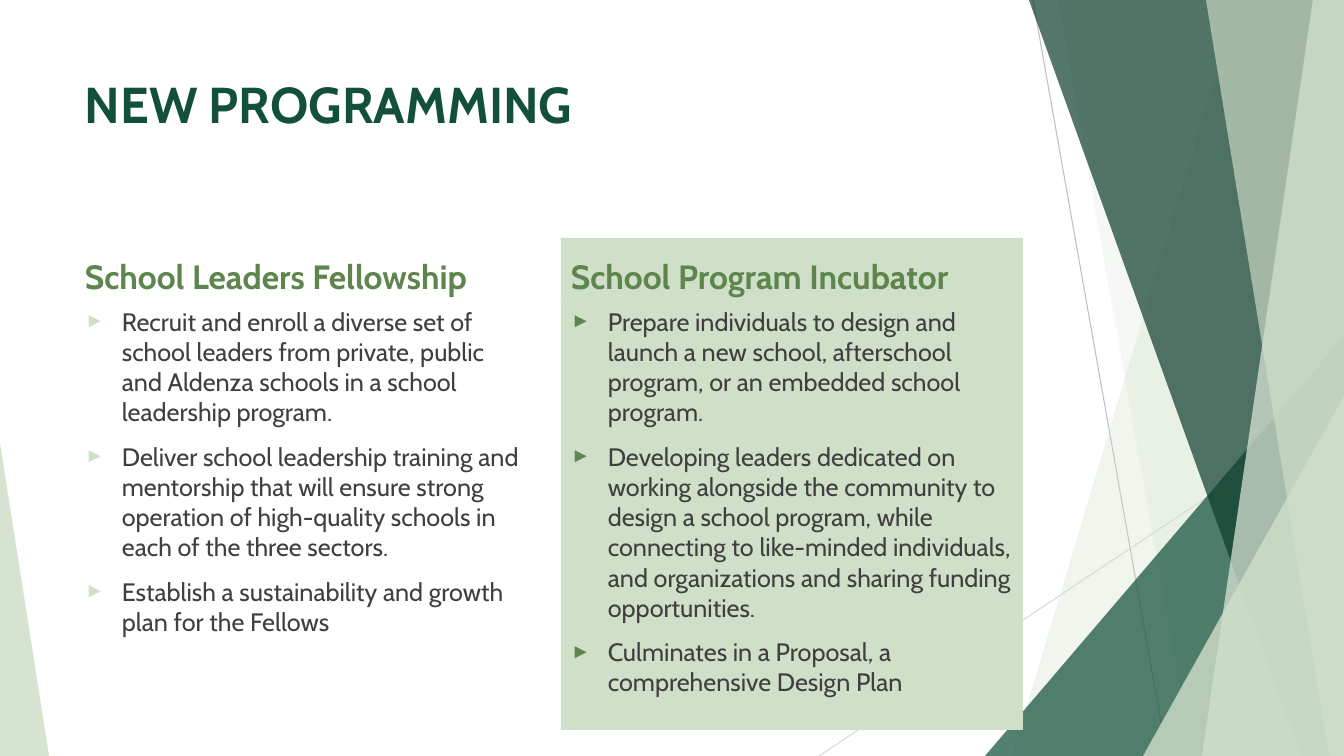
import pptx
import pptx.util
import pptx.dml.color
import pptx.enum.shapes
import pptx.enum.text
import pptx.oxml
import pptx.oxml.ns

SCALE = 914400 / 100.8
WIDTH, HEIGHT = 1344, 756
FONT = "Cabin"
PALE, DARK, DEEP, MIST = "CFDFC8", "13503B", "0E3C2C", "E1EBDD"
MOSS, GRAY = "5E854D", "3F3F3F"

TITLE = "NEW PROGRAMMING"
COLUMNS = [
    {"heading": "School Leaders Fellowship", "fill": None, "bullet": PALE, "height": 364,
     "items": ["Recruit and enroll a diverse set of school leaders from private, public and "
               "Aldenza schools in a school leadership program.",
               "Deliver school leadership training and mentorship that will ensure strong "
               "operation of high-quality schools in each of the three sectors.",
               "Establish a sustainability and growth plan for the Fellows"]},
    {"heading": "School Program Incubator", "fill": PALE, "bullet": MOSS, "height": 429,
     "items": ["Prepare individuals to design and launch a new school, afterschool program, "
               "or an embedded school program.",
               "Developing leaders dedicated on working alongside the community to design a "
               "school program, while connecting to like-minded individuals, and "
               "organizations and sharing funding opportunities.",
               "Culminates in a Proposal, a comprehensive Design Plan"]},
]
LEFT, COLUMN_STEP, COLUMN_WIDTH = 75, 486, 462
HEADING_TOP, HEADING_HEIGHT = 238, 63

LINES = [((1033, 0), (1167, 756), "BFBFBF"), ((1344, 406), (819, 756), "D8D8D8")]
BANDS_BEHIND = [(1238, 1012, PALE, 30), (1058, 1192, PALE, 20)]
LOWER_WEDGE = (985, 336, 359, 420, 1, DARK, 72)
BANDS_FRONT = [(1029, 1301, DEEP, 70), (1313, 1202, MIST, 70), (1206, 1329, PALE, 65)]
CORNER_WEDGES = [(1143, 396, 201, 360, 1, PALE, 80), (0, 443, 49, 313, 0, PALE, 85)]


def px(value):
    return pptx.util.Emu(round(value * SCALE))


def color(code):
    return pptx.dml.color.RGBColor.from_string(code)


def add_child(parent, tag, **attributes):
    child = parent.makeelement(pptx.oxml.ns.qn(tag), attributes)
    parent.append(child)
    return child


def paint(shape, code, opacity=100):
    shape.shadow.inherit = False
    shape.line.fill.background()
    shape.fill.solid()
    shape.fill.fore_color.rgb = color(code)
    if opacity < 100:
        tint = shape.fill._xPr.find(".//" + pptx.oxml.ns.qn("a:srgbClr"))
        add_child(tint, "a:alpha", val=str(opacity * 1000))


def add_line(start, end, code):
    line = slide.shapes.add_connector(
        pptx.enum.shapes.MSO_CONNECTOR.STRAIGHT, *map(px, start + end))
    line.line.color.rgb = color(code)
    line.line.width = pptx.util.Pt(0.75)
    add_child(line._element.spPr, "a:effectLst")


def add_band(top_x, bottom_x, code, opacity):
    builder = slide.shapes.build_freeform(top_x, 0, scale=SCALE)
    builder.add_line_segments([(WIDTH, 0), (WIDTH, HEIGHT), (bottom_x, HEIGHT)], close=True)
    paint(builder.convert_to_shape(), code, opacity)


def add_wedge(left, top, width, height, apex, code, opacity):
    wedge = slide.shapes.add_shape(
        pptx.enum.shapes.MSO_SHAPE.ISOSCELES_TRIANGLE, *map(px, (left, top, width, height)))
    wedge.adjustments[0] = apex
    paint(wedge, code, opacity)


def add_bullet(para, code):
    properties = para._p.get_or_add_pPr()
    indent = px(37)
    properties.set("marL", str(indent))
    properties.set("indent", str(-indent))
    add_child(add_child(properties, "a:buClr"), "a:srgbClr", val=code)
    add_child(properties, "a:buSzPct", val="80000")
    add_child(properties, "a:buFont", typeface="Arial")
    add_child(properties, "a:buChar", char="►")


def add_text(lines, frame, size, code, bold=False, fill=None, bullet=None, bottom=False):
    place = [px(value) for value in frame]
    if fill:
        box = slide.shapes.add_shape(pptx.enum.shapes.MSO_SHAPE.RECTANGLE, *place)
        paint(box, fill)
    else:
        box = slide.shapes.add_textbox(*place)
    text = box.text_frame
    text.word_wrap = True
    anchors = pptx.enum.text.MSO_ANCHOR
    text.vertical_anchor = anchors.BOTTOM if bottom else anchors.TOP
    for index, line in enumerate(lines):
        para = text.add_paragraph() if index else text.paragraphs[0]
        para.alignment = pptx.enum.text.PP_ALIGN.LEFT
        if index:
            para.space_before = pptx.util.Pt(10)
        if bullet:
            add_bullet(para, bullet)
        span = para.add_run()
        span.text = line
        span.font.name = FONT
        span.font.size = pptx.util.Pt(size)
        span.font.bold = bold
        span.font.color.rgb = color(code)


deck = pptx.Presentation()
deck.slide_width, deck.slide_height = px(WIDTH), px(HEIGHT)
slide = deck.slides.add_slide(deck.slide_layouts[6])

for line in LINES:
    add_line(*line)
for band in BANDS_BEHIND:
    add_band(*band)
add_wedge(*LOWER_WEDGE)
for band in BANDS_FRONT:
    add_band(*band)
for wedge in CORNER_WEDGES:
    add_wedge(*wedge)

add_text([TITLE], (LEFT, 68, 948, 145), 36, DARK, bold=True)
for number, column in enumerate(COLUMNS):
    left = LEFT + number * COLUMN_STEP
    add_text([column["heading"]], (left, HEADING_TOP, COLUMN_WIDTH, HEADING_HEIGHT),
             24, MOSS, bold=True, fill=column["fill"], bottom=True)
    add_text(column["items"],
             (left, HEADING_TOP + HEADING_HEIGHT, COLUMN_WIDTH, column["height"]),
             18, GRAY, fill=column["fill"], bullet=column["bullet"])

deck.save("out.pptx")
